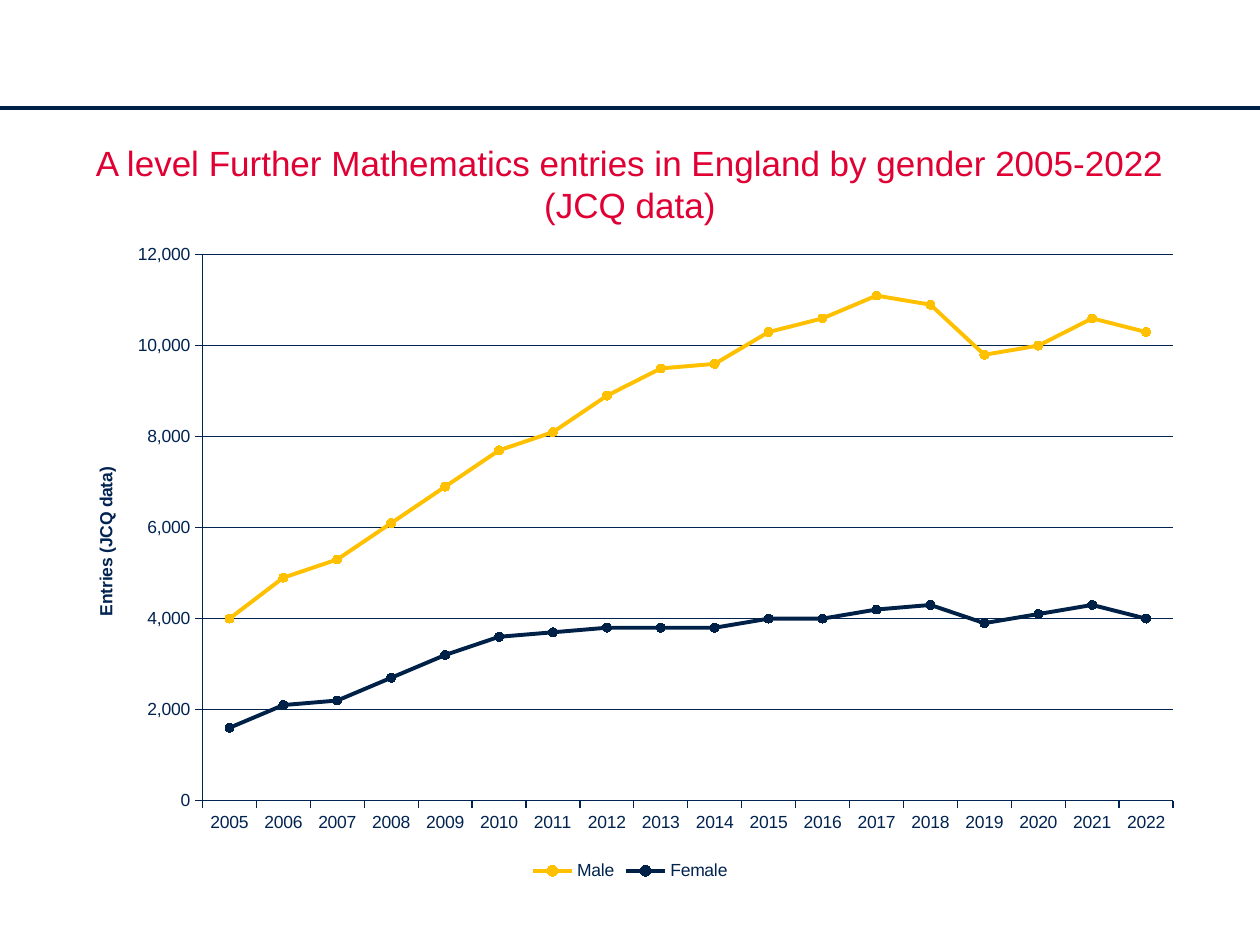
from lxml import etree
from pptx import Presentation, util as u
from pptx.chart.data import CategoryChartData
from pptx.dml.color import RGBColor
from pptx.enum import chart as ch, shapes, text
from pptx.oxml.ns import qn

COLORS = {"navy": "002147", "axis": "002350", "red": "E00034", "gold": "FFC000"}


def rgb(name):
    return RGBColor.from_string(COLORS[name])


def write(tf, value, size=10, color="axis", bold=False, align=text.PP_ALIGN.CENTER):
    p = tf.paragraphs[0]
    p.alignment = align
    r = p.add_run()
    r.text = value
    r.font.name = "Arial"
    r.font.size = u.Pt(size)
    r.font.bold = bold
    r.font.color.rgb = rgb(color)


prs = Presentation()
prs.slide_width, prs.slide_height = u.Inches(10), u.Inches(7.5)
s = prs.slides.add_slide(prs.slide_layouts[5])

rule = s.shapes.add_connector(
    shapes.MSO_CONNECTOR.STRAIGHT, u.Inches(0), u.Inches(0.86), u.Inches(10), u.Inches(0.86))
rule.line.color.rgb = rgb("navy")
rule.line.width = u.Pt(2.25)
etree.SubElement(rule.element.spPr, qn("a:effectLst"))

title = s.shapes.title
title.left, title.top = u.Inches(0.5), u.Inches(1.07)
title.width, title.height = u.Inches(9), u.Inches(0.77)
tf = title.text_frame
tf.word_wrap = True
tf.auto_size = text.MSO_AUTO_SIZE.SHAPE_TO_FIT_TEXT
tf.vertical_anchor = text.MSO_ANCHOR.MIDDLE
write(tf, "A level Further Mathematics entries in England by gender 2005-2022 (JCQ data)",
      size=20, color="red")

entries = {
    "Male": ("gold", [4000, 4900, 5300, 6100, 6900, 7700, 8100, 8900, 9500,
                      9600, 10300, 10600, 11100, 10900, 9800, 10000, 10600, 10300]),
    "Female": ("navy", [1600, 2100, 2200, 2700, 3200, 3600, 3700, 3800, 3800,
                        3800, 4000, 4000, 4200, 4300, 3900, 4100, 4300, 4000]),
}
data = CategoryChartData(number_format="#,##0")
data.categories = [str(year) for year in range(2005, 2023)]
for name, (color, values) in entries.items():
    data.add_series(name, values)
chart = s.shapes.add_chart(
    ch.XL_CHART_TYPE.LINE_MARKERS, u.Inches(0.5), u.Inches(1.84),
    u.Inches(9), u.Inches(5.19), data).chart
chart.has_title = False
chart.font.name = "Arial"
chart.font.size = u.Pt(10)
chart.font.color.rgb = rgb("navy")
chart.plots[0].vary_by_categories = False

for series in chart.plots[0].series:
    color = rgb(entries[series.name][0])
    series.smooth = False
    series.format.line.color.rgb = color
    series.format.line.width = u.Pt(2.25)
    series.marker.style = ch.XL_MARKER_STYLE.CIRCLE
    series.marker.size = 5
    series.marker.format.fill.solid()
    series.marker.format.fill.fore_color.rgb = color
    series.marker.format.line.color.rgb = color

val, cat = chart.value_axis, chart.category_axis
val.minimum_scale, val.maximum_scale, val.major_unit = 0, 12000, 2000
val.has_major_gridlines = True
val.tick_labels.number_format = "#,##0"
val.tick_labels.number_format_is_linked = False
for line in (val.format.line, cat.format.line, val.major_gridlines.format.line):
    line.color.rgb = rgb("axis")
    line.width = u.Pt(0.75)
for axis in (val, cat):
    axis.major_tick_mark = ch.XL_TICK_MARK.OUTSIDE
    axis.minor_tick_mark = ch.XL_TICK_MARK.NONE

chart.has_legend = True
chart.legend.position = ch.XL_LEGEND_POSITION.BOTTOM
chart.legend.include_in_layout = False
for font in (val.tick_labels.font, cat.tick_labels.font, chart.legend.font):
    font.name = "Arial"
    font.size = u.Pt(10)
    font.color.rgb = rgb("axis")

val.has_title = True
write(val.axis_title.text_frame, "Entries (JCQ data)", bold=True)

plot_area = chart.element.find(".//" + qn("c:plotArea"))
layouts = [
    (plot_area, 0, {"layoutTarget": "inner", "xMode": "edge", "yMode": "edge",
                    "x": 0.123, "y": 0.035, "w": 0.856, "h": 0.835}),
    (val.axis_title.element, 1, {"xMode": "edge", "yMode": "edge", "x": 0.025, "y": 0.355}),
]
for parent, index, settings in layouts:
    for old in parent.findall(qn("c:layout")):
        parent.remove(old)
    layout = etree.Element(qn("c:layout"))
    manual = etree.SubElement(layout, qn("c:manualLayout"))
    for tag, value in settings.items():
        etree.SubElement(manual, qn("c:" + tag)).set("val", str(value))
    parent.insert(index, layout)

prs.save("out.pptx")
